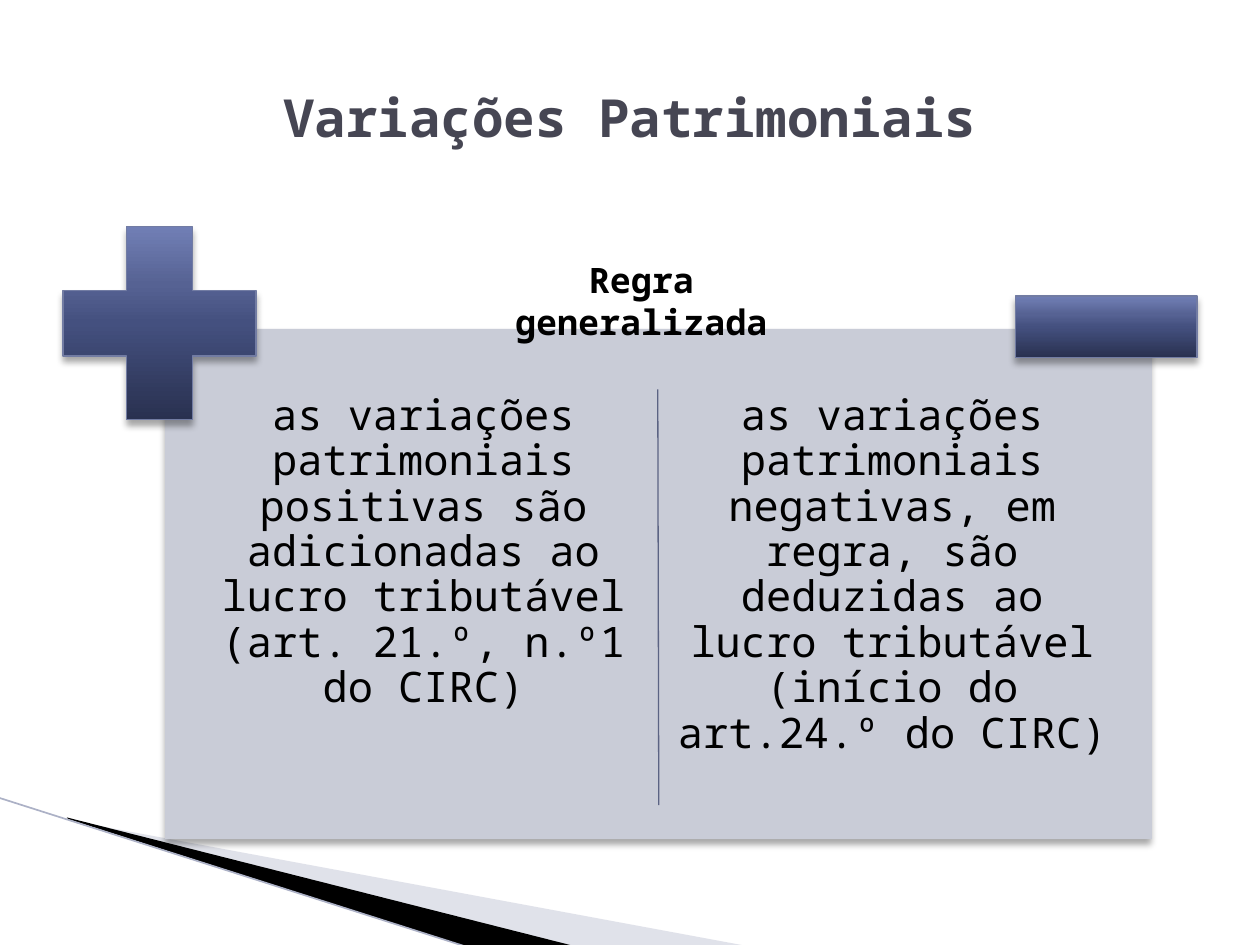
from lxml.etree import SubElement
from pptx import Presentation
from pptx.dml.color import RGBColor
from pptx.enum.shapes import MSO_CONNECTOR, MSO_SHAPE
from pptx.enum.text import MSO_ANCHOR, MSO_AUTO_SIZE, PP_ALIGN
from pptx.oxml.ns import qn
from pptx.util import Cm, Pt

FONT = "Noto Sans Mono"
COLORS = {
    "title": "464653",
    "text": "000000",
    "panel": "C9CCD7",
    "divider": "5B6383",
    "sign_line": "727CA3",
    "light_wedge": "B3B7CB",
    "dark_wedge": "000000",
    "edge": "ACB1C6",
    "shadow": "000000",
}
SIGN_STOPS = [(0, "293150"), (50, "44507F"), (70, "566293"), (100, "717FB5")]
COLUMNS = [
    (3.91, "as variações patrimoniais positivas são adicionadas ao "
           "lucro tributável (art. 21.º, n.º1 do CIRC)"),
    (13.36, "as variações patrimoniais negativas, em regra, são deduzidas ao "
            "lucro tributável (início do art.24.º do CIRC)"),
]


def rgb(name):
    return RGBColor.from_string(COLORS[name])


def add_color(parent, value, alpha=None):
    clr = SubElement(parent, qn("a:srgbClr"), val=value)
    if alpha is not None:
        SubElement(clr, qn("a:alpha"), val=str(alpha * 1000))


def write(tf, text, size, color="text", bold=False):
    """Fill a text frame with one centred run."""
    tf.word_wrap = True
    p = tf.paragraphs[0]
    p.alignment = PP_ALIGN.CENTER
    r = p.add_run()
    r.text = text
    r.font.name = FONT
    r.font.size = Pt(size)
    r.font.bold = bold
    r.font.color.rgb = rgb(color)
    return p


def add_text(s, box, text, size, bold=False):
    tf = s.shapes.add_textbox(*map(Cm, box)).text_frame
    return tf, write(tf, text, size, bold=bold)


def add_wedge(s, points, color, alpha=None):
    first, *rest = [(x * 100, y * 100) for x, y in points]
    builder = s.shapes.build_freeform(*first, scale=Cm(0.01))
    builder.add_line_segments(rest, close=True)
    sp = builder.convert_to_shape()
    sp.shadow.inherit = False
    sp.line.fill.background()
    sp.fill.solid()
    sp.fill.fore_color.rgb = rgb(color)
    if alpha is not None:
        clr = sp.fill._xPr.find(qn("a:solidFill"))[0]
        SubElement(clr, qn("a:alpha"), val=str(alpha * 1000))


def add_line(s, start, end, color, width):
    line = s.shapes.add_connector(MSO_CONNECTOR.STRAIGHT, *map(Cm, start + end))
    line.line.color.rgb = rgb(color)
    line.line.width = Pt(width)
    SubElement(line._element.spPr, qn("a:effectLst"))


def add_shadowed(s, kind, box):
    """Add a shape with a soft shadow below it."""
    sp = s.shapes.add_shape(kind, *map(Cm, box))
    sp.shadow.inherit = False
    effects = sp._element.spPr.find(qn("a:effectLst"))
    shadow = SubElement(effects, qn("a:outerShdw"), blurRad=str(Pt(4)),
                        dist=str(Pt(3)), dir="5400000", rotWithShape="0")
    add_color(shadow, COLORS["shadow"], 35)
    return sp


def add_panel(s):
    sp = add_shadowed(s, MSO_SHAPE.RECTANGLE, (3.33, 6.63, 19.89, 10.29))
    sp.fill.solid()
    sp.fill.fore_color.rgb = rgb("panel")
    sp.line.fill.background()


def add_sign(s, kind, box):
    """Add a plus or minus sign, dark at the bottom and light at the top."""
    sp = add_shadowed(s, kind, box)
    sp.line.color.rgb = rgb("sign_line")
    sp.line.width = Pt(0.75)
    sp.fill.gradient()
    sp.fill.gradient_angle = 90
    stops = sp._element.spPr.find(qn("a:gradFill")).find(qn("a:gsLst"))
    for stop in list(stops):
        stops.remove(stop)
    for pos, value in SIGN_STOPS:
        add_color(SubElement(stops, qn("a:gs"), pos=str(pos * 1000)), value)
    return sp


def add_column(s, left, text):
    tf, p = add_text(s, (left, 7.82, 9.25, 8.79), text, 24)
    tf.margin_left = tf.margin_right = Cm(0.13)
    tf.margin_top = tf.margin_bottom = Cm(0.13)
    p.line_spacing = 0.9


def set_title(s, text):
    title = s.shapes.title
    title.left, title.top, title.width, title.height = map(
        Cm, (1.27, 0.76, 22.86, 3.18))
    title.text_frame.vertical_anchor = MSO_ANCHOR.MIDDLE
    write(title.text_frame, text, 30, "title", bold=True)


def main():
    prs = Presentation()
    prs.slide_width, prs.slide_height = Cm(25.4), Cm(19.05)
    s = prs.slides.add_slide(prs.slide_layouts[5])
    set_title(s, "Variações Patrimoniais")

    add_wedge(s, [(1.4, 16.54), (15.11, 19.08), (11.58, 19.08), (1.4, 16.51)],
              "light_wedge", 40)
    add_wedge(s, [(1.35, 16.48), (11.61, 19.08), (9.45, 19.1), (1.37, 16.51)],
              "dark_wedge")
    add_line(s, (-0.03, 16.08), (9.45, 19.1), "edge", 0.95)

    add_panel(s)
    for left, text in COLUMNS:
        add_column(s, left, text)
    plus = add_sign(s, MSO_SHAPE.CROSS, (1.27, 4.57, 3.89, 3.89))
    plus.adjustments[0] = 0.33
    add_sign(s, MSO_SHAPE.RECTANGLE, (20.47, 5.97, 3.66, 1.24))
    add_line(s, (13.26, 7.85), (13.28, 16.23), "divider", 0.75)

    tf, _ = add_text(s, (8.94, 5.08, 7.98, 1.12), "Regra generalizada", 20, bold=True)
    tf.auto_size = MSO_AUTO_SIZE.SHAPE_TO_FIT_TEXT

    prs.save("out.pptx")


if __name__ == "__main__":
    main()
